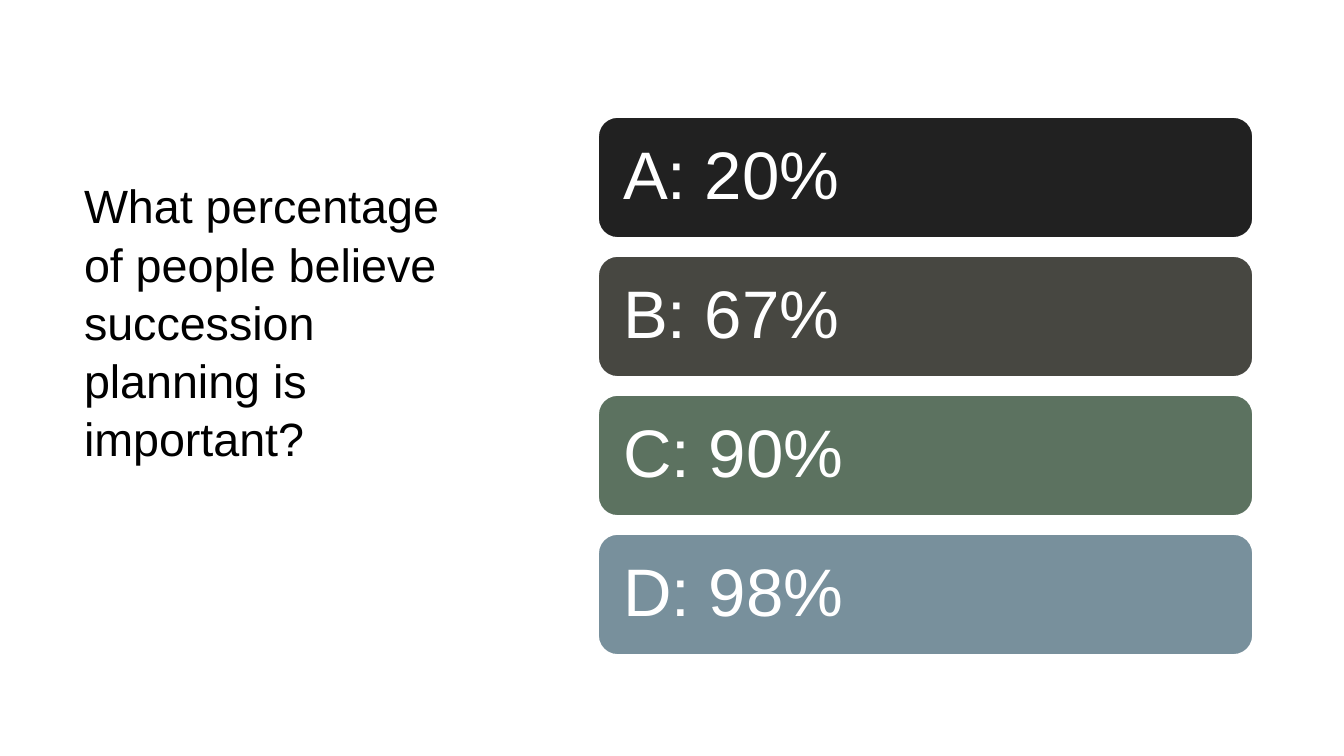
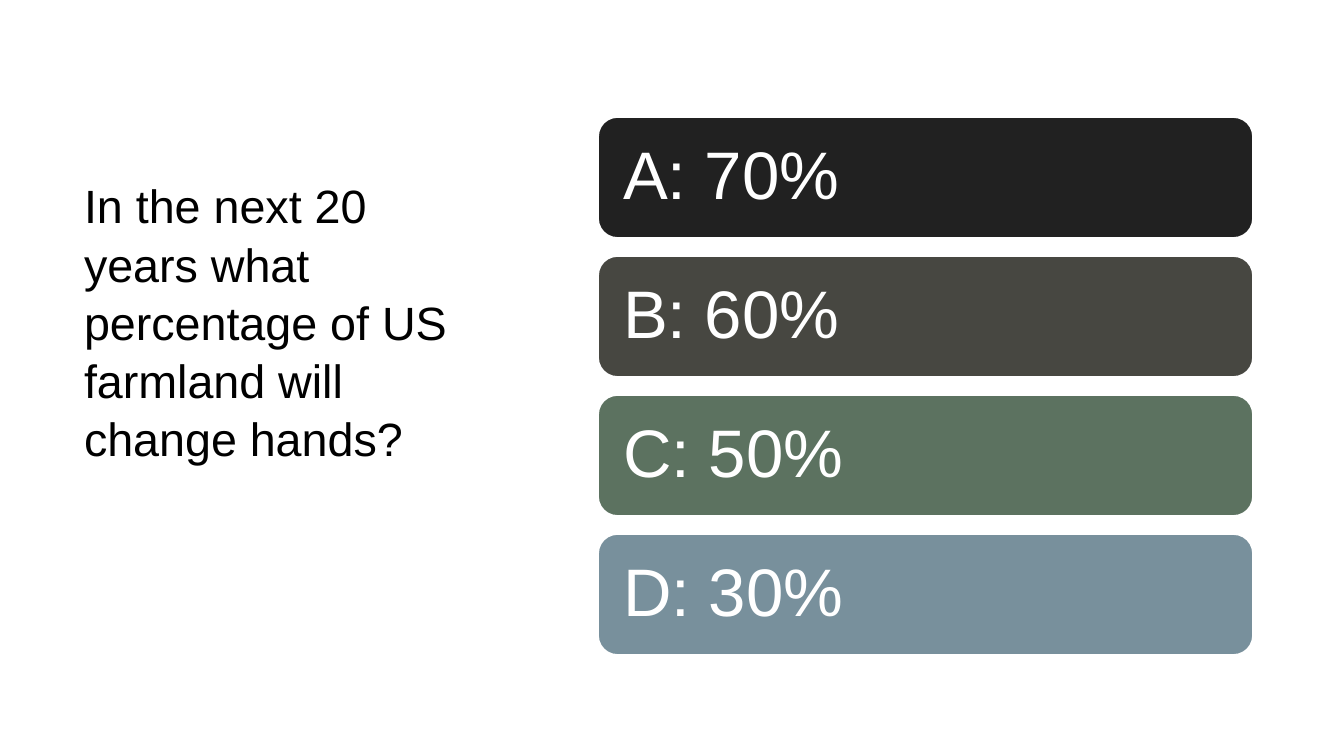
"""Build two quiz slides, each with a question and four answer bars."""
from pptx import Presentation
from pptx import util as u
from pptx.dml.color import RGBColor
from pptx.enum import shapes, text

QUIZ = [
    ("What percentage of people believe succession planning is important?",
     ["A: 20%", "B: 67%", "C: 90%", "D: 98%"]),
    ("In the next 20 years what percentage of US farmland will change hands?",
     ["A: 70%", "B: 60%", "C: 50%", "D: 30%"]),
]
COLORS = {"ink": "000000", "paper": "FFFFFF", "black": "212121",
          "olive": "474741", "green": "5C7260", "blue": "78909C"}
BAR_COLORS = ["black", "olive", "green", "blue"]
FONT = "Arial"
QUESTION_BOX = (71, 162, 418, 297)
BAR_LEFT, BAR_TOP, BAR_WIDTH, BAR_HEIGHT, BAR_PITCH = 597, 116, 657, 123, 139


def px(n):
    return u.Emu(round(n * 914400 / 134.4))


def rgb(name):
    return RGBColor.from_string(COLORS[name])


def place(sp, left, top, width, height):
    sp.left, sp.top, sp.width, sp.height = map(px, (left, top, width, height))


def write(sp, words, size, color, inset, anchor, spacing):
    tf = sp.text_frame
    tf.text = words
    tf.word_wrap = True
    tf.auto_size = text.MSO_AUTO_SIZE.NONE
    tf.vertical_anchor = anchor
    tf.margin_left = tf.margin_right = tf.margin_top = tf.margin_bottom = px(inset)
    p = tf.paragraphs[0]
    p.alignment = text.PP_ALIGN.LEFT
    p.line_spacing = spacing
    p.font.name, p.font.size = FONT, u.Pt(size)
    p.font.color.rgb = rgb(color)


def add_bar(s, row, answer, color):
    box = (BAR_LEFT, BAR_TOP + row * BAR_PITCH, BAR_WIDTH, BAR_HEIGHT)
    sp = s.shapes.add_shape(shapes.MSO_SHAPE.ROUNDED_RECTANGLE, *map(px, box))
    sp.shadow.inherit = False
    sp.fill.solid()
    sp.fill.fore_color.rgb = rgb(color)
    sp.line.color.rgb = rgb("paper")
    sp.line.width = u.Pt(2)
    write(sp, answer, 36, "paper", 20, text.MSO_ANCHOR.MIDDLE, 0.9)


def add_quiz_slide(prs, question, answers):
    s = prs.slides.add_slide(prs.slide_layouts[5])
    title = s.shapes.title
    place(title, *QUESTION_BOX)
    write(title, question, 25, "ink", 13, text.MSO_ANCHOR.TOP, 1.04)
    for row, (answer, color) in enumerate(zip(answers, BAR_COLORS)):
        add_bar(s, row, answer, color)


def main():
    prs = Presentation()
    prs.slide_width, prs.slide_height = px(1344), px(756)
    for question, answers in QUIZ:
        add_quiz_slide(prs, question, answers)
    prs.save("out.pptx")


if __name__ == "__main__":
    main()
